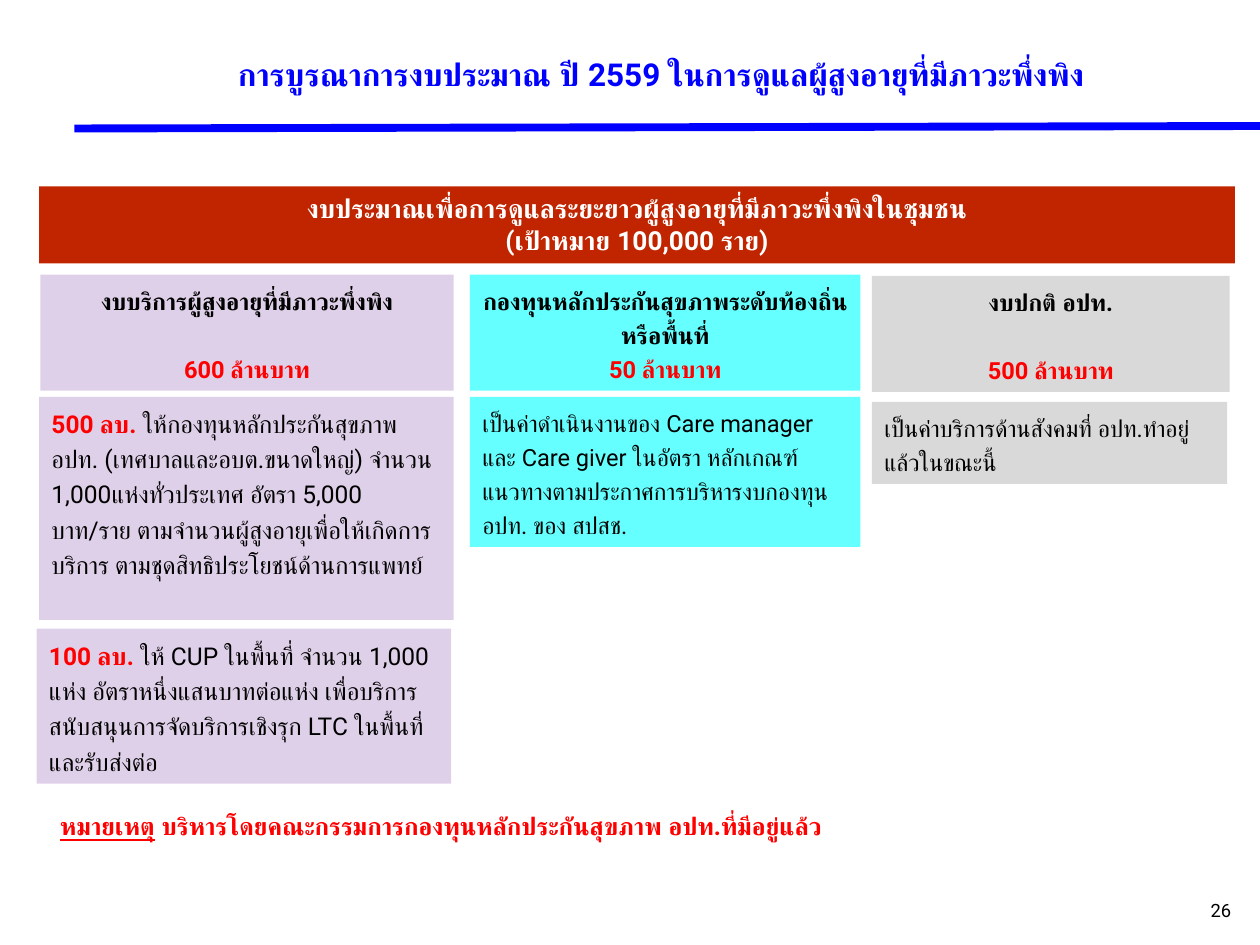
from lxml import etree
from pptx import Presentation
from pptx.dml.color import RGBColor
from pptx.enum.shapes import MSO_CONNECTOR, MSO_SHAPE
from pptx.enum.text import MSO_ANCHOR, PP_ALIGN
from pptx.oxml.ns import qn
from pptx.util import Inches, Pt

LEFT, CENTER, RIGHT = PP_ALIGN.LEFT, PP_ALIGN.CENTER, PP_ALIGN.RIGHT
TOP, MIDDLE = MSO_ANCHOR.TOP, MSO_ANCHOR.MIDDLE
RECTANGLE, STRAIGHT = MSO_SHAPE.RECTANGLE, MSO_CONNECTOR.STRAIGHT
FONT = "Roboto"
COLORS = {
    "blue": "0000FF", "red": "FF0000", "black": "000000", "white": "FFFFFF",
    "brick": "C02500", "lilac": "DFD0E9", "cyan": "66FFFF", "gray": "D9D9D9",
}

presentation = Presentation()
presentation.slide_width, presentation.slide_height = Inches(10), Inches(7.5)
slide = presentation.slides.add_slide(presentation.slide_layouts[6])

# Grid: 100 columns by 75 rows
COLUMN = presentation.slide_width / 100
ROW = presentation.slide_height / 75


def add_box(area, fill=None, anchor=TOP):
    """Add a plain rectangle, or a text box when there is no fill."""
    left, top, width, height = area
    place = [round(n) for n in (left * COLUMN, top * ROW, width * COLUMN, height * ROW)]
    if fill:
        shape = slide.shapes.add_shape(RECTANGLE, *place)
        shape.shadow.inherit = False
        shape.fill.solid()
        shape.fill.fore_color.rgb = RGBColor.from_string(COLORS[fill])
        shape.line.fill.background()
    else:
        shape = slide.shapes.add_textbox(*place)
    shape.text_frame.word_wrap = True
    shape.text_frame.vertical_anchor = anchor
    return shape.text_frame


def write(paragraph, runs, size, align=LEFT, spacing=1.0):
    """Fill a paragraph with (text, color, bold) runs."""
    paragraph.alignment = align
    paragraph.line_spacing = spacing
    for text, color, bold in runs:
        run = paragraph.add_run()
        run.text = text
        run.font.name, run.font.size, run.font.bold = FONT, Pt(size), bold
        run.font.color.rgb = RGBColor.from_string(COLORS[color])


# Title, rule and page number
rule = slide.shapes.add_connector(
    STRAIGHT, round(5.9 * COLUMN), round(10.2 * ROW), round(100 * COLUMN), round(10 * ROW))
rule.line.color.rgb = RGBColor.from_string(COLORS["blue"])
rule.line.width = Pt(4.5)
etree.SubElement(rule._element.spPr, qn("a:effectLst"))

title = add_box((5.9, 2.5, 81.1, 6.7), anchor=MIDDLE)
write(title.paragraphs[0],
      [("การบูรณาการงบประมาณ ปี 2559 ในการดูแลผู้สูงอายุที่มีภาวะพึ่งพิง", "blue", True)],
      18, RIGHT)
page_number = add_box((91.2, 70, 7.5, 4.4), "white", MIDDLE)
write(page_number.paragraphs[0], [("26", "black", False)], 10.5, RIGHT)

# Banner
banner = add_box((3.1, 14.8, 94.9, 6.1), "brick")
write(banner.paragraphs[0],
      [("งบประมาณเพื่อการดูแลระยะยาวผู้สูงอายุที่มีภาวะพึ่งพิงในชุมชน", "white", True)], 15, CENTER)
write(banner.add_paragraph(), [("(เป้าหมาย 100,000 ราย)", "white", True)], 15, CENTER)

# Budget headings: area, fill, name, amount, gap before the amount in points
headings = [
    ((3.2, 21.8, 32.8, 9.2), "lilac", "งบบริการผู้สูงอายุที่มีภาวะพึ่งพิง", "600 ล้านบาท", 19.5),
    ((37.3, 21.8, 31, 9.2), "cyan",
     "กองทุนหลักประกันสุขภาพระดับท้องถิ่นหรือพื้นที่", "50 ล้านบาท", 0),
    ((69.2, 21.9, 28.4, 9.2), "gray", "งบปกติ อปท.", "500 ล้านบาท", 19.5),
]
for area, fill, name, amount, gap in headings:
    heading = add_box(area, fill)
    write(heading.paragraphs[0], [(name, "black", True)], 13.5, CENTER, 1.2)
    amount_line = heading.add_paragraph()
    write(amount_line, [(amount, "red", True)], 13.5, CENTER, 1.2)
    amount_line.space_before = Pt(gap)

# Budget details: area, fill, text size, runs
details = [
    ((3.1, 31.5, 32.9, 17.7), "lilac", 14, [
        ("500 ลบ. ", "red", True),
        ("ให้กองทุนหลักประกันสุขภาพ อปท. (เทศบาลและอบต.ขนาดใหญ่) จำนวน "
         "1,000แห่งทั่วประเทศ อัตรา 5,000 บาท/ราย ตามจำนวนผู้สูงอายุเพื่อให้เกิดการบริการ "
         "ตามชุดสิทธิประโยชน์ด้านการแพทย์", "black", False)]),
    ((2.9, 49.9, 32.9, 12.3), "lilac", 14, [
        ("100 ลบ. ", "red", True),
        ("ให้ CUP ในพื้นที่ จำนวน 1,000 แห่ง อัตราหนึ่งแสนบาทต่อแห่ง "
         "เพื่อบริการสนับสนุนการจัดบริการเชิงรุก LTC ในพื้นที่ และรับส่งต่อ", "black", False)]),
    ((37.3, 31.5, 31, 11.9), "cyan", 13.5, [
        ("เป็นค่าดำเนินงานของ Care manager และ Care giver ในอัตรา หลักเกณฑ์ "
         "แนวทางตามประกาศการบริหารงบกองทุน อปท. ของ สปสช.", "black", False)]),
    ((69.2, 31.9, 28.2, 6.5), "gray", 13.5, [
        ("เป็นค่าบริการด้านสังคมที่ อปท.ทำอยู่แล้วในขณะนี้", "black", False)]),
]
for area, fill, size, runs in details:
    write(add_box(area, fill).paragraphs[0], runs, size, spacing=1.2)

# Remark
remark = add_box((3.8, 63.9, 74.4, 3.4)).paragraphs[0]
write(remark, [
    ("หมายเหตุ", "red", True),
    (" บริหารโดยคณะกรรมการกองทุนหลักประกันสุขภาพ อปท.ที่มีอยู่แล้ว", "red", True)], 14)
remark.runs[0].font.underline = True

presentation.save("out.pptx")
